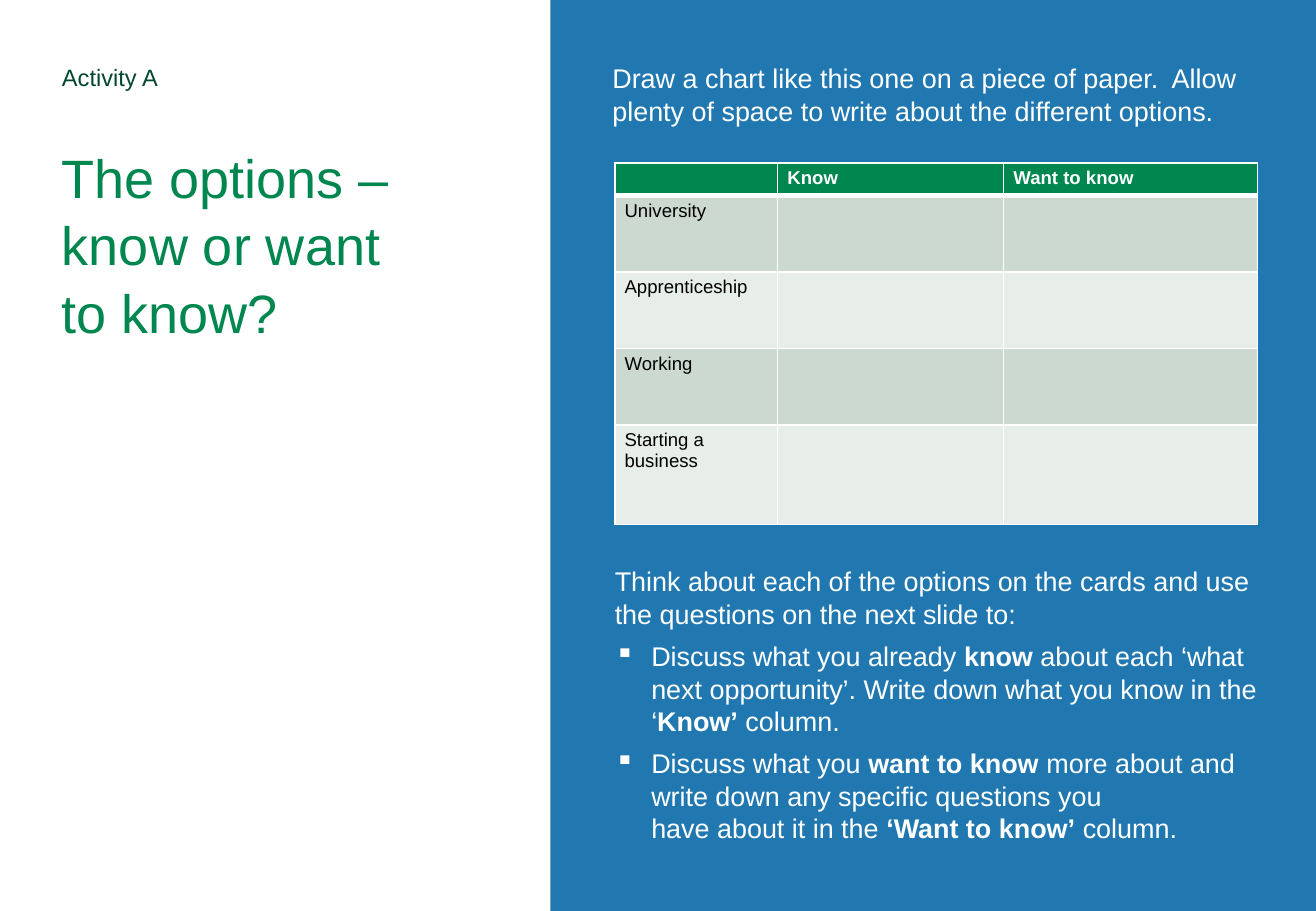
from dataclasses import dataclass

from pptx import Presentation, oxml, util as u
from pptx.dml.color import RGBColor
from pptx.enum import shapes, text
from pptx.oxml import ns


@dataclass(frozen=True)
class Theme:
    font: str = "Arial"
    dark_green: str = "024731"
    green: str = "00864F"
    blue: str = "2178B0"
    white: str = "FFFFFF"
    black: str = "000000"
    bands: tuple = ("CCD9D0", "E7EDE9")
    label: int = 14
    title: int = 32
    body: int = 16
    cell: int = 11


@dataclass(frozen=True)
class Box:
    left: float
    top: float
    width: float
    height: float

    def inches(self):
        return [u.Inches(n) for n in (self.left, self.top, self.width, self.height)]


THEME = Theme()
MARGIN = 0.51
HEADINGS = ["", "Know", "Want to know"]
OPTIONS = ["University", "Apprenticeship", "Working", "Starting a business"]
COLUMN_WIDTHS = [1.34, 1.86, 2.09]
ROW_HEIGHTS = [0.27, 0.63, 0.63, 0.63, 0.82]
INTRO = (
    "Draw a chart like this one on a piece of paper.  "
    "Allow plenty of space to write about the different options."
)
PROMPT = (
    "Think about each of the options on the cards and use "
    "the questions on the next slide to:"
)
TASKS = [
    [
        ("Discuss what you already ", False),
        ("know", True),
        (" about each ‘what next opportunity’. "
         "Write down what you know in the ‘", False),
        ("Know’", True),
        (" column.", False),
    ],
    [
        ("Discuss what you ", False),
        ("want to know", True),
        (" more about and write down any specific questions you \n"
         "have about it in the ", False),
        ("‘Want to know’", True),
        (" column.", False),
    ],
]


def write(para, content, *, size, color, bold=False, before=0, after=0, spacing=None):
    para.alignment = text.PP_ALIGN.LEFT
    para.space_before, para.space_after = u.Pt(before), u.Pt(after)
    if spacing:
        para.line_spacing = spacing
    for index, line in enumerate(content.split("\n")):
        if index:
            para.add_line_break()
        span = para.add_run()
        span.text = line
        span.font.name = THEME.font
        span.font.size = u.Pt(size)
        span.font.bold = bold
        span.font.color.rgb = RGBColor.from_string(color)


def set_up_frame(frame, inset=0):
    frame.word_wrap = True
    frame.vertical_anchor = text.MSO_ANCHOR.TOP
    frame.margin_left = frame.margin_right = u.Inches(inset)
    frame.margin_top = frame.margin_bottom = u.Inches(inset)
    return frame


def add_bullet(para):
    props = para._p.get_or_add_pPr()
    props.set("marL", str(u.Inches(0.3)))
    props.set("indent", str(u.Inches(-0.3)))
    bullet = oxml.parse_xml(f'<a:buChar {ns.nsdecls("a")} char="▪"/>')
    props.append(bullet)


def style_cell(cell, fill, top=1, bottom=1):
    cell.margin_left = cell.margin_right = u.Inches(0.08)
    cell.margin_top = cell.margin_bottom = u.Inches(0.04)
    cell.fill.solid()
    cell.fill.fore_color.rgb = RGBColor.from_string(fill)
    props = cell._tc.get_or_add_tcPr()
    for index, (side, width) in enumerate(zip("LRTB", (1, 1, top, bottom))):
        border = oxml.parse_xml(
            f'<a:ln{side} {ns.nsdecls("a")} w="{u.Pt(width)}"><a:solidFill>'
            f'<a:srgbClr val="{THEME.white}"/></a:solidFill></a:ln{side}>'
        )
        props.insert(index, border)


def add_heading(page, box):
    frame = set_up_frame(page.shapes.add_textbox(*box.inches()).text_frame)
    write(frame.paragraphs[0], "Activity A", size=THEME.label,
          color=THEME.dark_green, spacing=1.04)
    write(frame.add_paragraph(), "The options – know or want to know?",
          size=THEME.title, color=THEME.green, before=30, spacing=1.04)


def add_panel(page, box):
    panel = page.shapes.add_shape(shapes.MSO_SHAPE.RECTANGLE, *box.inches())
    panel.shadow.inherit = False
    panel.fill.solid()
    panel.fill.fore_color.rgb = RGBColor.from_string(THEME.blue)
    panel.line.fill.background()
    frame = set_up_frame(panel.text_frame, MARGIN)
    write(frame.paragraphs[0], INTRO, size=THEME.body, color=THEME.white, after=12)


def add_options_table(page, box):
    rows = [HEADINGS] + [[option, "", ""] for option in OPTIONS]
    table = page.shapes.add_table(len(rows), len(HEADINGS), *box.inches()).table
    for column, width in zip(table.columns, COLUMN_WIDTHS):
        column.width = u.Inches(width)
    for row, height in zip(table.rows, ROW_HEIGHTS):
        row.height = u.Inches(height)
    for r, row in enumerate(rows):
        header = r == 0
        fill = THEME.green if header else THEME.bands[(r - 1) % 2]
        for c, content in enumerate(row):
            cell = table.cell(r, c)
            style_cell(cell, fill, top=3 if r == 1 else 1, bottom=3 if header else 1)
            para = cell.text_frame.paragraphs[0]
            if content:
                write(para, content, size=THEME.cell, bold=header,
                      color=THEME.white if header else THEME.black)
            else:
                para._p.append(oxml.parse_xml(
                    f'<a:endParaRPr {ns.nsdecls("a")} sz="{THEME.cell * 100}"/>'
                ))


def add_tasks(page, box):
    frame = set_up_frame(page.shapes.add_textbox(*box.inches()).text_frame)
    style = dict(size=THEME.body, color=THEME.white, after=6)
    write(frame.paragraphs[0], PROMPT, **style)
    for task in TASKS:
        para = frame.add_paragraph()
        for content, bold in task:
            write(para, content, bold=bold, **style)
        add_bullet(para)


def build_activity(page, box):
    split = 4.53
    panel = Box(box.left + split, box.top, box.width - split, box.height)
    inner = panel.left + MARGIN + 0.02
    add_heading(page, Box(box.left + MARGIN, box.top + MARGIN, 2.82, 1.91))
    add_panel(page, panel)
    add_options_table(page, Box(inner, panel.top + 1.34,
                                sum(COLUMN_WIDTHS), sum(ROW_HEIGHTS)))
    add_tasks(page, Box(inner, panel.top + 4.65, 5.3, 2.32))


def main():
    deck = Presentation()
    deck.slide_width, deck.slide_height = u.Inches(10.83), u.Inches(7.5)
    page = deck.slides.add_slide(deck.slide_layouts[6])
    build_activity(page, Box(0, 0, 10.83, 7.5))
    deck.save("out.pptx")


if __name__ == "__main__":
    main()
